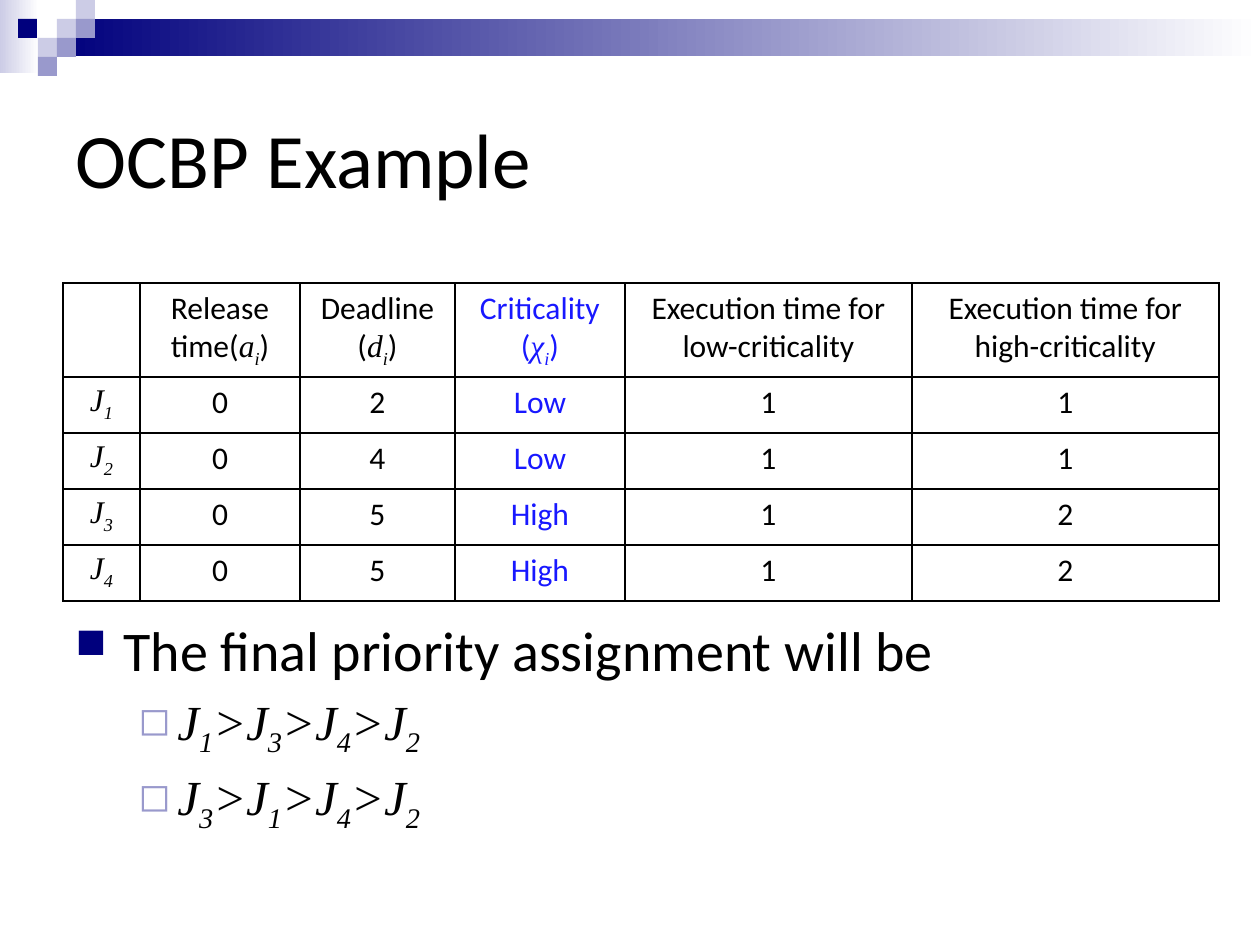
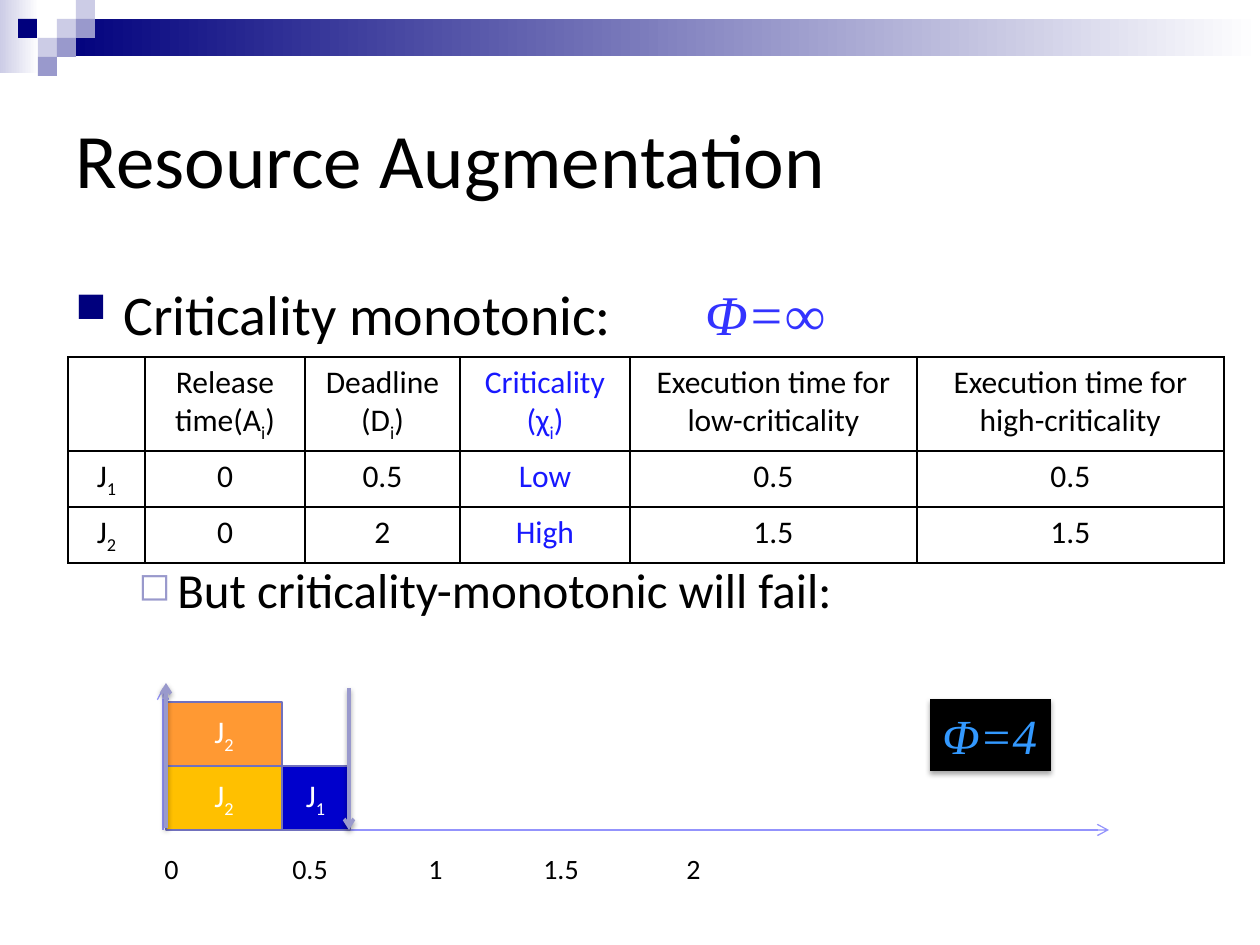
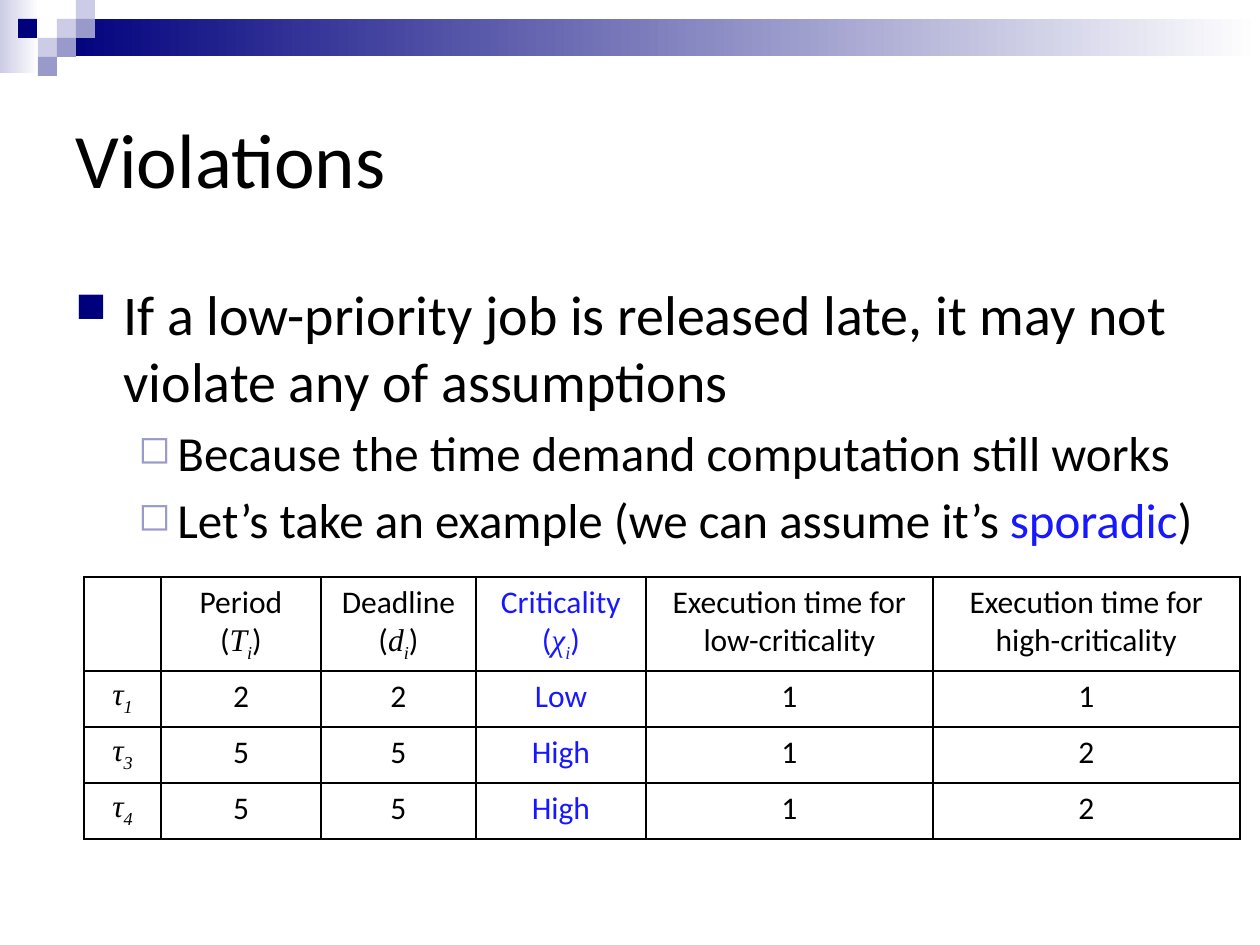
from itertools import accumulate, groupby

from lxml.etree import SubElement
from pptx import Presentation
from pptx.dml.color import RGBColor
from pptx.enum.shapes import MSO_CONNECTOR, MSO_SHAPE
from pptx.enum.text import MSO_ANCHOR, MSO_AUTO_SIZE, PP_ALIGN
from pptx.oxml import parse_xml
from pptx.oxml.ns import nsdecls, qn
from pptx.util import Emu, Pt

THEME = {
    "navy": "00007D", "lilac": "9999CC", "pale": "CCCCE6", "white": "FFFFFF",
    "black": "000000", "accent": "1818FF", "formula": "3333FF", "sky": "3399FF",
    "axis": "9393FC", "edge": "7171BD",
    "orange": "FF9933", "amber": "FFC000", "blue": "0000CC",
    "font": "Calibri", "math": "Times New Roman",
    "title": 44, "body": 32, "sub": 28, "cell": 18, "tick": 16,
}

# Text marks: *math*, ~accent~, ^formula colour^, _ lowers the next character
COLOR_MARKS = {"~": "accent", "^": "formula"}
MARKS = {"*", *COLOR_MARKS}

# Decoration shared by all slides
GRADIENTS = [((0, 0, 39, 73), "pale"), ((57, 19, 1203, 37), "navy")]
TILE = 19
TILES = [(57, 19, "pale"), (76, 0, "pale"), (76, 19, "lilac"), (38, 38, "pale"),
         (18, 19, "navy"), (57, 38, "lilac"), (38, 57, "lilac")]

# Bullets by level: glyph, colour, size %, left margin, hanging indent, type size, space before
BULLETS = [("■", "navy", 75, 48, 48, "body", 6),
           ("◻", "lilac", 80, 102, 39, "sub", 5)]

# Tables
COLS = [77, 160, 155, 170, 287, 307]
HEAD_H, ROW_H = 94, 56
CRITICALITY_COL = 3
EXECUTION = ["Execution time for low-criticality", "Execution time for high-criticality"]

SLIDES = [
    {"title": "OCBP Example",
     "body_box": (63, 609, 1134, 242),
     "body": [(0, "The final priority assignment will be"),
              (1, "*J_1>J_3>J_4>J_2*"),
              (1, "*J_3>J_1>J_4>J_2*")],
     "table_at": (63, 283),
     "rows": [["", "Release time(*a_i*)", "Deadline (*d_i*)", "Criticality (*χ_i*)", *EXECUTION],
              ["*J_1*", "0", "2", "Low", "1", "1"],
              ["*J_2*", "0", "4", "Low", "1", "1"],
              ["*J_3*", "0", "5", "High", "1", "2"],
              ["*J_4*", "0", "5", "High", "1", "2"]]},
    {"title": "Resource Augmentation",
     "body_box": (63, 273, 1134, 536),
     "body": [(0, "Criticality monotonic:\t\t^*Φ=∞*^"),
              (1, "But criticality-monotonic will fail:")],
     "gap_before_last": 122,
     "schedule": True,
     "table_at": (68, 357),
     "rows": [["", "Release time(A_i)", "Deadline (D_i)", "Criticality (χ_i)", *EXECUTION],
              ["J_1", "0", "0.5", "Low", "0.5", "0.5"],
              ["J_2", "0", "2", "High", "1.5", "1.5"]]},
    {"title": "Violations",
     "body_box": (63, 273, 1155, 536),
     "body": [(0, "If a low-priority job is released late, it may not violate any of assumptions"),
              (1, "Because the time demand computation still works"),
              (1, "Let’s take an example (we can assume it’s ~sporadic~)")],
     "table_at": (84, 577),
     "rows": [["", "Period\n(*T_i*)", "Deadline (*d_i*)", "Criticality (*χ_i*)", *EXECUTION],
              ["*τ_1*", "2", "2", "Low", "1", "1"],
              ["*τ_3*", "5", "5", "High", "1", "2"],
              ["*τ_4*", "5", "5", "High", "1", "2"]]},
]

# Schedule diagram
ORIGIN_X, BASE_Y = 166, 830
BLOCK_H = 64
BLOCKS = [("J_1", 281, 0, 69, "blue"),       # label, left, row above axis, width, fill
          ("J_2", ORIGIN_X, 1, 116, "orange"),
          ("J_2", ORIGIN_X, 0, 116, "amber")]
AXES = [(163, BASE_Y, 163, 688), (ORIGIN_X, BASE_Y, 1109, BASE_Y)]
EVENTS = [(349, 688, 349, BASE_Y), (ORIGIN_X, 828, ORIGIN_X, 683)]
TICKS = "0\t0.5\t1\t1.5\t2"
TICK_STOPS = [128, 264, 379, 522]
LINE_SHADOW = (38, 3.1, 1.6)                 # opacity %, blur pt, distance pt
BOX_SHADOW = (35, 3.1, 1.8)


def px(n):
    return Emu(round(n * 914400 / 126))


def rgb(name):
    return RGBColor.from_string(THEME[name])


def put(obj, **values):
    for name, value in values.items():
        setattr(obj, name, value)


# Text
def split_marks(text):
    active, lowered, marked = frozenset(), False, []
    for ch in text:
        if ch in MARKS:
            active ^= {ch}
        elif ch == "_":
            lowered = True
        else:
            marked.append((active, lowered, ch))
            lowered = False
    for (marks, sub), group in groupby(marked, key=lambda m: m[:2]):
        yield "".join(ch for _, _, ch in group), marks, sub


def write(p, text, size, color="black"):
    for words, marks, sub in split_marks(text):
        math = "*" in marks
        tint = next((COLOR_MARKS[m] for m in marks if m in COLOR_MARKS), color)
        for i, piece in enumerate(words.split("\n")):
            if i:
                p.add_line_break()
            if not piece:
                continue
            r = p.add_run()
            r.text = piece
            put(r.font, size=Pt(THEME[size]), italic=math,
                name=THEME["math" if math else "font"])
            r.font.color.rgb = rgb(tint)
            if sub:
                r.font._element.set("baseline", "-25000")


def add_text(s, box, text, size, color="black"):
    tb = s.shapes.add_textbox(*map(px, box))
    tb.text_frame.word_wrap = False
    write(tb.text_frame.paragraphs[0], text, size, color)
    return tb


# Shapes
def add_effects(shape, shadow=None):
    effects = SubElement(shape.element.spPr, qn("a:effectLst"))
    if shadow:
        opacity, blur, dist = shadow
        effects.append(parse_xml(
            f'<a:outerShdw {nsdecls("a")} blurRad="{Pt(blur)}" dist="{Pt(dist)}" dir="5400000" '
            f'rotWithShape="0"><a:srgbClr val="{THEME["black"]}">'
            f'<a:alpha val="{opacity * 1000}"/></a:srgbClr></a:outerShdw>'))


def add_rect(s, box, fill, edge=None, fade=False):
    sp = s.shapes.add_shape(MSO_SHAPE.RECTANGLE, *map(px, box))
    sp.shadow.inherit = False
    if fade:
        sp.fill.gradient()
        sp.fill.gradient_angle = 0
        for stop, name in zip(sp.fill.gradient_stops, (fill, "white")):
            stop.color.rgb = rgb(name)
    else:
        sp.fill.solid()
        sp.fill.fore_color.rgb = rgb(fill)
    if edge:
        sp.line.color.rgb = rgb(edge)
        sp.line.width = Pt(1)
    else:
        sp.line.fill.background()
    return sp


def add_arrow(s, ends, color, width, shadow=None):
    line = s.shapes.add_connector(MSO_CONNECTOR.STRAIGHT, *map(px, ends))
    line.line.color.rgb = rgb(color)
    line.line.width = Pt(width)
    SubElement(line.element.spPr.find(qn("a:ln")), qn("a:tailEnd"), type="arrow")
    add_effects(line, shadow)


# Slide parts
def decorate_master(prs, s):
    parts = [add_rect(s, box, fill, fade=True) for box, fill in GRADIENTS]
    parts += [add_rect(s, (x, y, TILE, TILE), fill) for x, y, fill in TILES]
    for i, sp in enumerate(parts, start=100):
        sp.element.nvSpPr.cNvPr.set("id", str(i))
        prs.slide_master.shapes.element.append(sp.element)


def add_title(s, text):
    title = s.shapes.title
    put(title, left=px(63), top=px(63), width=px(1134), height=px(189))
    put(title.text_frame, word_wrap=True, auto_size=MSO_AUTO_SIZE.NONE,
        vertical_anchor=MSO_ANCHOR.MIDDLE)
    p = title.text_frame.paragraphs[0]
    p.alignment = PP_ALIGN.LEFT
    write(p, text, "title")


def add_body(s, box, items, gap_before_last=None):
    tf = s.shapes.add_textbox(*map(px, box)).text_frame
    tf.word_wrap = True
    for i, (level, text) in enumerate(items):
        glyph, color, scale, margin, hang, size, space = BULLETS[level]
        p = tf.add_paragraph() if i else tf.paragraphs[0]
        put(p, level=level, space_before=Pt(space))
        if gap_before_last and i == len(items) - 1:
            p.space_before = Pt(gap_before_last)
        pPr = p._p.get_or_add_pPr()
        pPr.set("marL", str(px(margin)))
        pPr.set("indent", str(-px(hang)))
        SubElement(SubElement(pPr, qn("a:buClr")), qn("a:srgbClr"), val=THEME[color])
        SubElement(pPr, qn("a:buSzPct"), val=str(scale * 1000))
        SubElement(pPr, qn("a:buChar"), char=glyph)
        write(p, text, size)


def add_borders(cell):
    tcPr = cell._tc.get_or_add_tcPr()
    for i, side in enumerate(("lnL", "lnR", "lnT", "lnB")):
        tcPr.insert(i, parse_xml(
            f'<a:{side} {nsdecls("a")} w="{Pt(1)}"><a:solidFill>'
            f'<a:srgbClr val="{THEME["black"]}"/></a:solidFill></a:{side}>'))


def add_job_table(s, at, rows):
    heights = [HEAD_H] + [ROW_H] * (len(rows) - 1)
    box = (*at, sum(COLS), sum(heights))
    table = s.shapes.add_table(len(rows), len(COLS), *map(px, box)).table
    put(table, first_row=False, horz_banding=False)
    for col, width in zip(table.columns, COLS):
        col.width = px(width)
    for row, height, texts in zip(table.rows, heights, rows):
        row.height = px(height)
        for c, (cell, text) in enumerate(zip(row.cells, texts)):
            cell.fill.background()
            add_borders(cell)
            p = cell.text_frame.paragraphs[0]
            p.alignment = PP_ALIGN.CENTER
            write(p, text, "cell", "accent" if c == CRITICALITY_COL else "black")


def add_schedule(s):
    for ends in AXES:
        add_arrow(s, ends, "axis", 0.75)

    ticks = add_text(s, (152, 845, 708, 47), TICKS, "tick")
    pPr = ticks.text_frame.paragraphs[0]._p.get_or_add_pPr()
    stops = SubElement(pPr, qn("a:tabLst"))
    for stop in TICK_STOPS:
        SubElement(stops, qn("a:tab"), pos=str(px(stop)), algn="l")

    for label, left, row, width, fill in BLOCKS:
        top = BASE_Y - (row + 1) * BLOCK_H
        sp = add_rect(s, (left, top, width, BLOCK_H), fill, "edge")
        sp.text_frame.vertical_anchor = MSO_ANCHOR.MIDDLE
        p = sp.text_frame.paragraphs[0]
        p.alignment = PP_ALIGN.CENTER
        write(p, label, "cell", "white")

    for ends in EVENTS:
        add_arrow(s, ends, "lilac", 2, LINE_SHADOW)

    phi = add_text(s, (930, 699, 121, 72), "*Φ=4*", "sub", "sky")
    phi.fill.solid()
    phi.fill.fore_color.rgb = rgb("black")
    add_effects(phi, BOX_SHADOW)


def main():
    prs = Presentation()
    put(prs, slide_width=px(1260), slide_height=px(945))
    for i, spec in enumerate(SLIDES):
        s = prs.slides.add_slide(prs.slide_layouts[5])
        if i == 0:
            decorate_master(prs, s)
        add_title(s, spec["title"])
        add_body(s, spec["body_box"], spec["body"], spec.get("gap_before_last"))
        if spec.get("schedule"):
            add_schedule(s)
        add_job_table(s, spec["table_at"], spec["rows"])
    prs.save("out.pptx")


if __name__ == "__main__":
    main()
